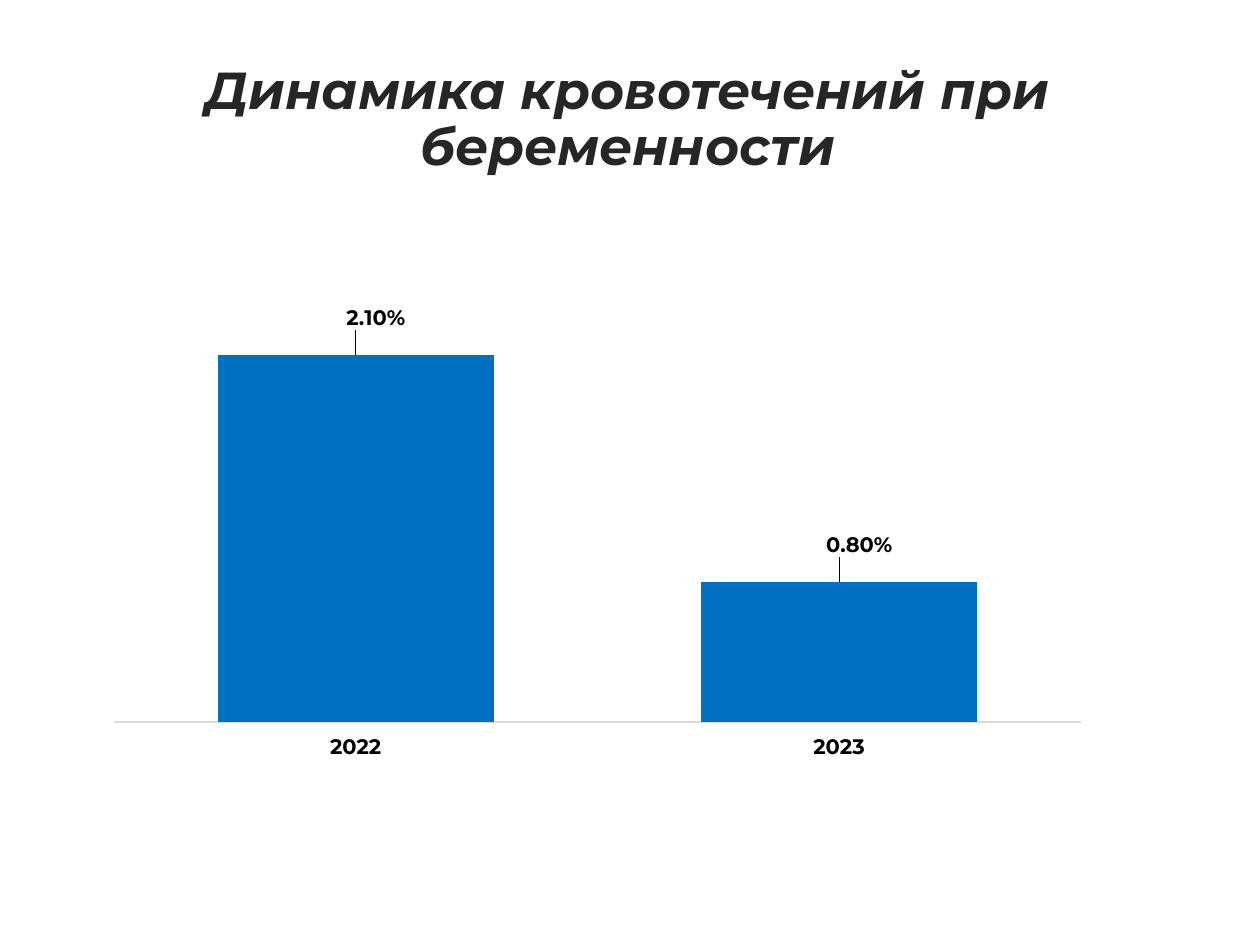
from lxml.etree import SubElement
from pptx import Presentation
from pptx.chart.data import CategoryChartData
from pptx.dml.color import RGBColor
from pptx.enum.chart import XL_CHART_TYPE, XL_LABEL_POSITION, XL_TICK_LABEL_POSITION, XL_TICK_MARK
from pptx.enum.text import MSO_ANCHOR, MSO_AUTO_SIZE, PP_ALIGN
from pptx.oxml import parse_xml
from pptx.oxml.ns import nsdecls, qn
from pptx.util import Emu, Pt

PX = 914400 // 126
TITLE_COLOR = RGBColor(0x26, 0x26, 0x26)
TEXT_COLOR = RGBColor(0, 0, 0)
BAR_COLOR = RGBColor(0x00, 0x70, 0xC0)
AXIS_COLOR = RGBColor(0xD9, 0xD9, 0xD9)
FONT = "Montserrat"

YEARS = ["2022", "2023"]
RATES = [0.021, 0.008]
LABEL_SHIFTS = [(0.02, -0.04), (0.02, -0.04)]


def to_emu(box):
    return [Emu(length * PX) for length in box]


def style_label(font):
    font.name = FONT
    font.size = Pt(12)
    font.bold = True
    font.color.rgb = TEXT_COLOR


def manual_layout(**settings):
    """Chart layout in fractions of the chart area."""
    layout = parse_xml(f"<c:layout {nsdecls('c')}/>")
    manual = SubElement(layout, qn("c:manualLayout"))
    for tag, value in settings.items():
        SubElement(manual, qn(f"c:{tag}")).set("val", str(value))
    return layout


def add_title(slide, box):
    title = slide.shapes.title
    title.left, title.top, title.width, title.height = to_emu(box)
    frame = title.text_frame
    frame.text = "Динамика кровотечений при беременности"
    frame.word_wrap = True
    frame.auto_size = MSO_AUTO_SIZE.NONE
    frame.vertical_anchor = MSO_ANCHOR.MIDDLE
    heading = frame.paragraphs[0]
    heading.alignment = PP_ALIGN.CENTER
    heading.line_spacing = 0.9
    heading.font.name = FONT
    heading.font.size = Pt(29.7)
    heading.font.bold = True
    heading.font.italic = True
    heading.font.color.rgb = TITLE_COLOR


def add_rate_chart(slide, box):
    data = CategoryChartData(number_format="0.00%")
    data.categories = YEARS
    data.add_series("Series 1", RATES)
    chart = slide.shapes.add_chart(XL_CHART_TYPE.COLUMN_CLUSTERED, *to_emu(box), data).chart
    chart.has_legend = False
    chart.has_title = False
    chart.font.name = "Calibri"
    chart.font.size = Pt(10)
    chart.font.color.rgb = TEXT_COLOR

    plot_area = chart.plots[0]._element.getparent()
    for old_layout in plot_area.findall(qn("c:layout")):
        plot_area.remove(old_layout)
    plot_area.insert(0, manual_layout(
        layoutTarget="inner", xMode="edge", yMode="edge", x=0.02, y=0.02, w=0.96, h=0.9))

    year_axis = chart.category_axis
    year_axis.major_tick_mark = XL_TICK_MARK.NONE
    year_axis.tick_label_position = XL_TICK_LABEL_POSITION.LOW
    year_axis.format.line.color.rgb = AXIS_COLOR
    year_axis.format.line.width = Pt(0.75)
    style_label(year_axis.tick_labels.font)

    rate_axis = chart.value_axis
    rate_axis.minimum_scale = 0
    rate_axis.maximum_scale = 0.025
    rate_axis.has_major_gridlines = False
    rate_axis.tick_labels.number_format = "0.00%"
    rate_axis.tick_labels.number_format_is_linked = False
    rate_axis.visible = False

    plot = chart.plots[0]
    plot.gap_width = 75
    plot.vary_by_categories = False
    bars = plot.series[0]
    bars.format.fill.solid()
    bars.format.fill.fore_color.rgb = BAR_COLOR

    labels = bars.data_labels
    labels.show_value = True
    labels.number_format = "0.00%"
    labels.number_format_is_linked = False
    labels.position = XL_LABEL_POSITION.OUTSIDE_END
    style_label(labels.font)
    for index, (shift_x, shift_y) in enumerate(LABEL_SHIFTS):
        label = bars.points[index].data_label
        style_label(label.font)
        label.position = XL_LABEL_POSITION.OUTSIDE_END
        label_element = labels._element.findall(qn("c:dLbl"))[index]
        label_element.insert(1, manual_layout(x=shift_x, y=shift_y))


def main():
    presentation = Presentation()
    presentation.slide_width = Emu(1260 * PX)
    presentation.slide_height = Emu(945 * PX)
    slide = presentation.slides.add_slide(presentation.slide_layouts[5])
    add_title(slide, (174, 55, 908, 132))
    add_rate_chart(slide, (94, 275, 1007, 486))
    presentation.save("out.pptx")


if __name__ == "__main__":
    main()
